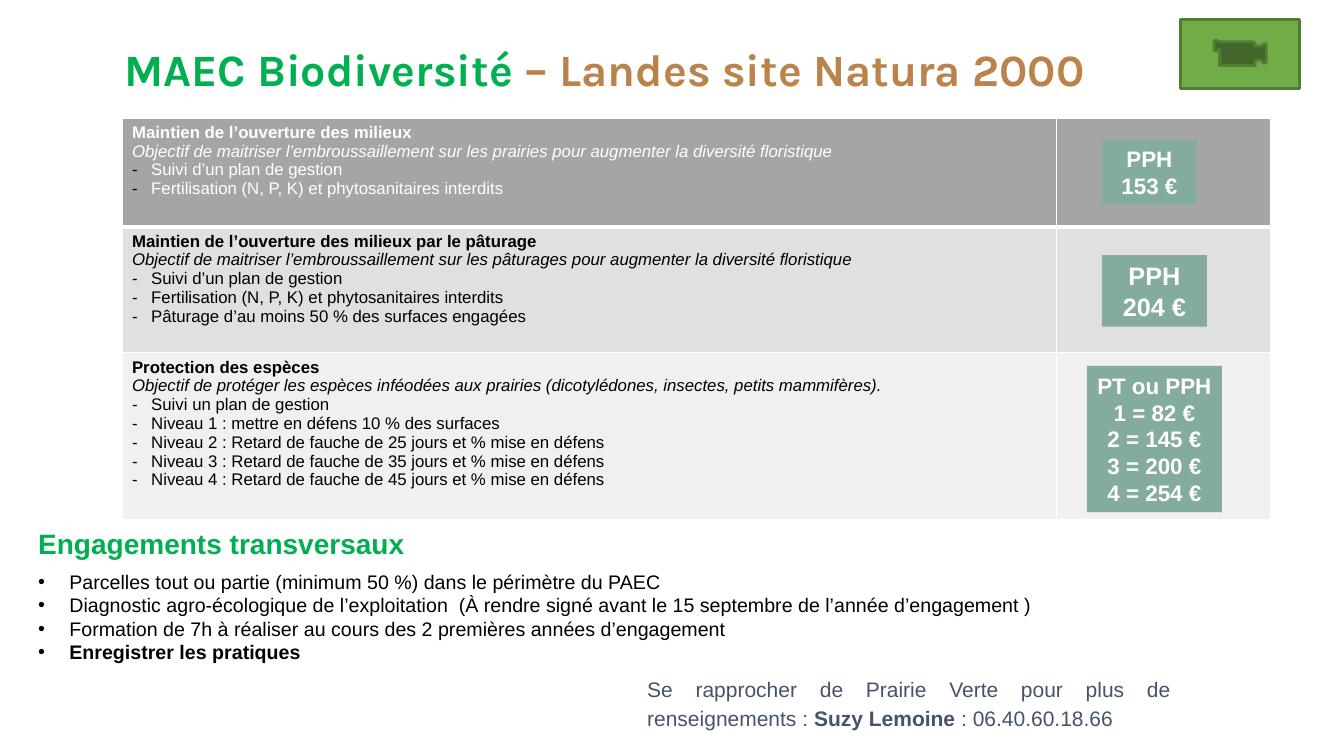
from lxml.etree import SubElement
from pptx import Presentation
from pptx.dml.color import RGBColor
from pptx.enum.shapes import MSO_SHAPE
from pptx.enum.text import MSO_ANCHOR, MSO_AUTO_SIZE, PP_ALIGN
from pptx.oxml.ns import qn
from pptx.util import Inches, Pt

WHITE = RGBColor(0xFF, 0xFF, 0xFF)
BLACK = RGBColor(0x00, 0x00, 0x00)
GREEN = RGBColor(0x00, 0xB0, 0x50)
BROWN = RGBColor(0xBA, 0x83, 0x4B)
SAGE = RGBColor(0x84, 0xAC, 0x9D)
SLATE = RGBColor(0x44, 0x54, 0x6A)
DARK_GREY = RGBColor(0xA5, 0xA5, 0xA5)
MID_GREY = RGBColor(0xE0, 0xE0, 0xE0)
LIGHT_GREY = RGBColor(0xF0, 0xF0, 0xF0)
BUTTON_GREEN = RGBColor(0x70, 0xAD, 0x47)
BUTTON_EDGE = RGBColor(0x51, 0x7E, 0x33)

COLUMN_WIDTHS = (9.27, 2.12)
MEASURES = [
    (1.08, DARK_GREY, WHITE, "Maintien de l’ouverture des milieux",
     "Objectif de maitriser l’embroussaillement sur les prairies pour augmenter la diversité floristique",
     ["Suivi d’un plan de gestion",
      "Fertilisation (N, P, K) et phytosanitaires interdits"]),
    (1.25, MID_GREY, BLACK, "Maintien de l’ouverture des milieux par le pâturage",
     "Objectif de maitriser l’embroussaillement sur les pâturages pour augmenter la diversité floristique",
     ["Suivi d’un plan de gestion",
      "Fertilisation (N, P, K) et phytosanitaires interdits",
      "Pâturage d’au moins 50 % des surfaces engagées"]),
    (1.65, LIGHT_GREY, BLACK, "Protection des espèces",
     "Objectif de protéger les espèces inféodées aux prairies (dicotylédones, insectes, petits mammifères).",
     ["Suivi un plan de gestion",
      "Niveau 1 : mettre en défens 10 % des surfaces",
      "Niveau 2 : Retard de fauche de 25 jours et % mise en défens",
      "Niveau 3 : Retard de fauche de 35 jours et % mise en défens",
      "Niveau 4 : Retard de fauche de 45 jours et % mise en défens"]),
]
BADGES = [
    ((10.93, 1.39, 0.94, 0.64), 16, ["PPH", "153 €"]),
    ((10.93, 2.53, 1.04, 0.71), 18, ["PPH", "204 €"]),
    ((10.78, 3.63, 1.34, 1.45), 16,
     ["PT ou PPH", "1 = 82 €", "2 = 145 €", "3 = 200 €", "4 = 254 €"]),
]
COMMITMENTS = [
    ("Parcelles tout ou partie (minimum 50 %) dans le périmètre du PAEC", False),
    ("Diagnostic agro-écologique de l’exploitation  (À rendre signé avant le 15 septembre de l’année d’engagement )", False),
    ("Formation de 7h à réaliser au cours des 2 premières années d’engagement", False),
    ("Enregistrer les pratiques", True),
]


def add_span(para, text, size, colour, bold=False, italic=False, font="Arial"):
    span = para.add_run()
    span.text = text
    span.font.name = font
    span.font.size = Pt(size)
    span.font.bold = bold
    span.font.italic = italic
    span.font.color.rgb = colour


def next_para(frame):
    first = frame.paragraphs[0]
    return first if not first.runs else frame.add_paragraph()


def add_bullet(para, symbol, indent):
    properties = para._p.get_or_add_pPr()
    properties.set("marL", str(Inches(indent)))
    properties.set("indent", str(-Inches(indent)))
    colour = SubElement(properties, qn("a:buClr"))
    SubElement(colour, qn("a:srgbClr"), val=str(BLACK))
    SubElement(properties, qn("a:buFont"), typeface="Arial")
    SubElement(properties, qn("a:buChar"), char=symbol)


def set_borders(cell, bottom):
    properties = cell._tc.get_or_add_tcPr()
    for side, width in (("L", 1), ("R", 1), ("T", 1), ("B", bottom)):
        line = SubElement(properties, qn("a:ln" + side), w=str(Pt(width)))
        fill = SubElement(line, qn("a:solidFill"))
        SubElement(fill, qn("a:srgbClr"), val=str(WHITE))


def add_title(page):
    title = page.shapes.title
    title.left, title.top = Inches(1.13), Inches(0.36)
    title.width, title.height = Inches(10.84), Inches(0.64)
    frame = title.text_frame
    frame.auto_size = MSO_AUTO_SIZE.NONE
    frame.vertical_anchor = MSO_ANCHOR.TOP
    para = frame.paragraphs[0]
    para.alignment = PP_ALIGN.LEFT
    add_span(para, "MAEC Biodiversité ", 32, GREEN, True, font="Karla")
    add_span(para, "– Landes site Natura 2000", 32, BROWN, True, font="Karla")


def add_measures(page):
    height = sum(measure[0] for measure in MEASURES)
    table = page.shapes.add_table(
        len(MEASURES), len(COLUMN_WIDTHS), Inches(1.21), Inches(1.17),
        Inches(sum(COLUMN_WIDTHS)), Inches(height)).table
    table.first_row = False
    table.horz_banding = False
    for column, width in zip(table.columns, COLUMN_WIDTHS):
        column.width = Inches(width)
    for index, (row, measure) in enumerate(zip(table.rows, MEASURES)):
        row_height, fill, ink, name, goal, rules = measure
        row.height = Inches(row_height)
        for cell in row.cells:
            set_borders(cell, 3 if index == 0 else 1)
            cell.fill.solid()
            cell.fill.fore_color.rgb = fill
        frame = row.cells[0].text_frame
        add_span(next_para(frame), name, 12, ink, bold=True)
        add_span(next_para(frame), goal, 12, ink, italic=True)
        for rule in rules:
            para = next_para(frame)
            add_bullet(para, "-", 0.19)
            add_span(para, rule, 12, ink)


def add_rectangle(page, kind, place, fill):
    shape = page.shapes.add_shape(kind, *map(Inches, place))
    shape.shadow.inherit = False
    shape.fill.solid()
    shape.fill.fore_color.rgb = fill
    return shape


def add_badge(page, place, size, lines):
    badge = add_rectangle(page, MSO_SHAPE.RECTANGLE, place, SAGE)
    badge.line.fill.background()
    frame = badge.text_frame
    frame.word_wrap = False
    for text in lines:
        para = next_para(frame)
        para.alignment = PP_ALIGN.CENTER
        add_span(para, text, size, WHITE, bold=True)


def add_text_frame(page, place):
    frame = page.shapes.add_textbox(*map(Inches, place)).text_frame
    frame.word_wrap = True
    return frame


def add_commitments(page):
    frame = add_text_frame(page, (0.28, 5.17, 10.1, 1.48))
    add_span(next_para(frame), "Engagements transversaux", 20, GREEN, bold=True)
    for index, (text, bold) in enumerate(COMMITMENTS):
        para = next_para(frame)
        add_bullet(para, "•", 0.31)
        if index == 0:
            para.space_before = Pt(7)
        add_span(para, text, 14, BLACK, bold)


def add_contact(page):
    frame = add_text_frame(page, (6.32, 6.57, 5.39, 0.77))
    frame.margin_top = frame.margin_bottom = Inches(0.1)
    para = next_para(frame)
    para.alignment = PP_ALIGN.JUSTIFY
    para.line_spacing = 1.15
    add_span(para, "Se rapprocher de Prairie Verte pour plus de renseignements : ", 15, SLATE)
    add_span(para, "Suzy Lemoine ", 15, SLATE, bold=True)
    add_span(para, ": 06.40.60.18.66", 15, SLATE)


def add_movie_button(page):
    button = add_rectangle(
        page, MSO_SHAPE.ACTION_BUTTON_MOVIE, (11.71, 0.19, 1.18, 0.69), BUTTON_GREEN)
    button.line.color.rgb = BUTTON_EDGE
    button.line.width = Pt(2)


def main():
    deck = Presentation()
    deck.slide_width, deck.slide_height = Inches(13.33), Inches(7.5)
    page = deck.slides.add_slide(deck.slide_layouts[5])
    add_title(page)
    add_measures(page)
    for place, size, lines in BADGES:
        add_badge(page, place, size, lines)
    add_commitments(page)
    add_movie_button(page)
    add_contact(page)
    deck.save("out.pptx")


if __name__ == "__main__":
    main()
